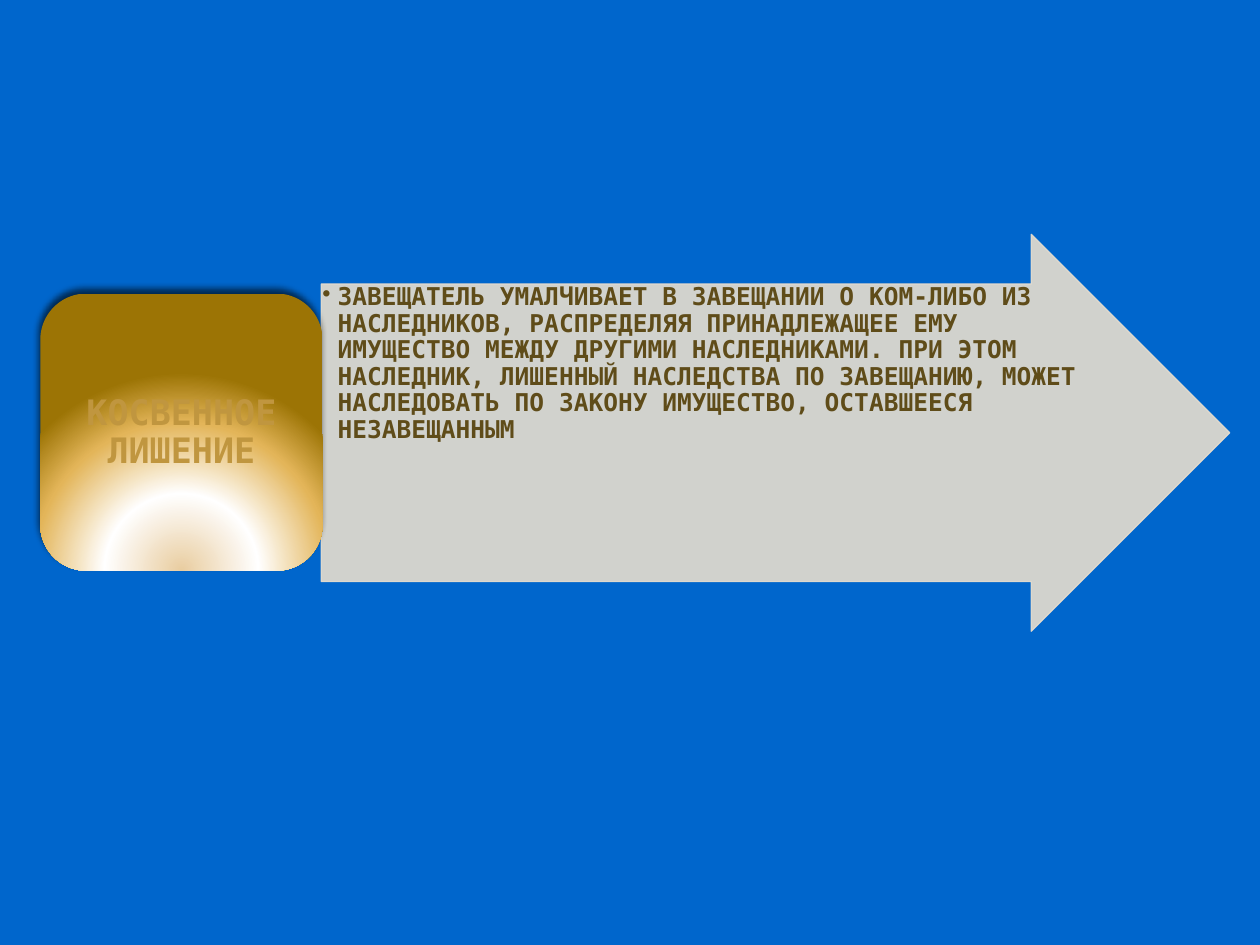
from lxml import etree
from pptx import Presentation
from pptx.dml.color import RGBColor
from pptx.enum.shapes import MSO_SHAPE as SHAPE
from pptx.enum.text import MSO_ANCHOR as ANCHOR, PP_ALIGN as ALIGN
from pptx.oxml import parse_xml
from pptx.oxml.ns import nsdecls, qn
from pptx.util import Inches, Pt

FONT = "DejaVu Sans Mono"
BACKGROUND, ARROW_COLOR = "0066CC", "E8DECE"
TITLE = "КОСВЕННОЕ ЛИШЕНИЕ"
EXPLANATION = (
    "ЗАВЕЩАТЕЛЬ УМАЛЧИВАЕТ В ЗАВЕЩАНИИ О КОМ-ЛИБО ИЗ НАСЛЕДНИКОВ, "
    "РАСПРЕДЕЛЯЯ ПРИНАДЛЕЖАЩЕЕ ЕМУ ИМУЩЕСТВО МЕЖДУ ДРУГИМИ НАСЛЕДНИКАМИ. "
    "ПРИ ЭТОМ НАСЛЕДНИК, ЛИШЕННЫЙ НАСЛЕДСТВА ПО ЗАВЕЩАНИЮ, МОЖЕТ "
    "НАСЛЕДОВАТЬ ПО ЗАКОНУ ИМУЩЕСТВО, ОСТАВШЕЕСЯ НЕЗАВЕЩАННЫМ"
)
GLOW_STOPS = [(0, "E9CDA0"), (39, "FFFFFF"), (75, "E3B559"), (100, "9C7405")]


def rgb(value):
    return RGBColor.from_string(value)


def add_shape(slide, kind, box):
    s = slide.shapes.add_shape(kind, *map(Inches, box))
    s.shadow.inherit = False
    return s


def set_opacity(fill_parent, percent):
    color = fill_parent.find(qn("a:solidFill"))[0]
    etree.SubElement(color, qn("a:alpha")).set("val", str(percent * 1000))


def set_glow(s, stops):
    """Fill with a radial gradient centred on the bottom edge."""
    s.fill.background()
    stop_xml = "".join(
        f'<a:gs pos="{pos * 1000}"><a:srgbClr val="{color}"/></a:gs>'
        for pos, color in stops)
    grad = parse_xml(
        f'<a:gradFill {nsdecls("a")} rotWithShape="1"><a:gsLst>{stop_xml}</a:gsLst>'
        '<a:path path="circle"><a:fillToRect l="50000" t="100000" r="50000"/>'
        '</a:path></a:gradFill>')
    props = s._element.spPr
    props.replace(props.find(qn("a:noFill")), grad)


def set_shadow(s, color, opacity, blur, distance, angle):
    effects = s._element.spPr.find(qn("a:effectLst"))
    effects.append(parse_xml(
        f'<a:outerShdw {nsdecls("a")} blurRad="{Pt(blur)}" dist="{Pt(distance)}" '
        f'dir="{angle * 60000}" rotWithShape="0"><a:srgbClr val="{color}">'
        f'<a:alpha val="{opacity * 1000}"/></a:srgbClr></a:outerShdw>'))


def add_text(slide, text, box, *, size, color, margins, anchor=ANCHOR.TOP,
             align=ALIGN.LEFT, bullet_indent=None):
    tf = slide.shapes.add_textbox(*map(Inches, box)).text_frame
    tf.word_wrap = True
    tf.vertical_anchor = anchor
    side, top = map(Inches, margins)
    tf.margin_left = tf.margin_right = side
    tf.margin_top = tf.margin_bottom = top
    p = tf.paragraphs[0]
    p.alignment = align
    p.line_spacing = 0.9
    if bullet_indent:
        props = p._p.get_or_add_pPr()
        props.set("marL", str(Inches(bullet_indent)))
        props.set("indent", str(-Inches(bullet_indent)))
        etree.SubElement(props, qn("a:buChar")).set("char", "•")
    r = p.add_run()
    r.text = text
    r.font.name, r.font.size, r.font.bold = FONT, Pt(size), True
    r.font.color.rgb = rgb(color)


prs = Presentation()
prs.slide_width, prs.slide_height = Inches(10), Inches(7.5)
slide = prs.slides.add_slide(prs.slide_layouts[6])
slide.background.fill.solid()
slide.background.fill.fore_color.rgb = rgb(BACKGROUND)

arrow = add_shape(slide, SHAPE.RIGHT_ARROW, (2.55, 1.86, 7.21, 3.15))
arrow.adjustments[0], arrow.adjustments[1] = 0.75, 0.5
arrow.fill.solid()
arrow.fill.fore_color.rgb = rgb(ARROW_COLOR)
arrow.line.color.rgb = rgb(ARROW_COLOR)
arrow.line.width = Pt(0.75)
set_opacity(arrow._element.spPr, 90)
set_opacity(arrow.line._ln, 90)
add_text(slide, EXPLANATION, (2.55, 2.25, 6.03, 2.36), size=14, color="5F4C19",
         margins=(0.01, 0.01), bullet_indent=0.12)

card = add_shape(slide, SHAPE.ROUNDED_RECTANGLE, (0.32, 2.33, 2.24, 2.2))
card.line.fill.background()
set_glow(card, GLOW_STOPS)
set_shadow(card, "000000", opacity=60, blur=4, distance=3, angle=245)
add_text(slide, TITLE, (0.43, 2.44, 2.02, 1.99), size=20, color="C0963F",
         margins=(0.08, 0.04), anchor=ANCHOR.MIDDLE, align=ALIGN.CENTER)

prs.save("out.pptx")
